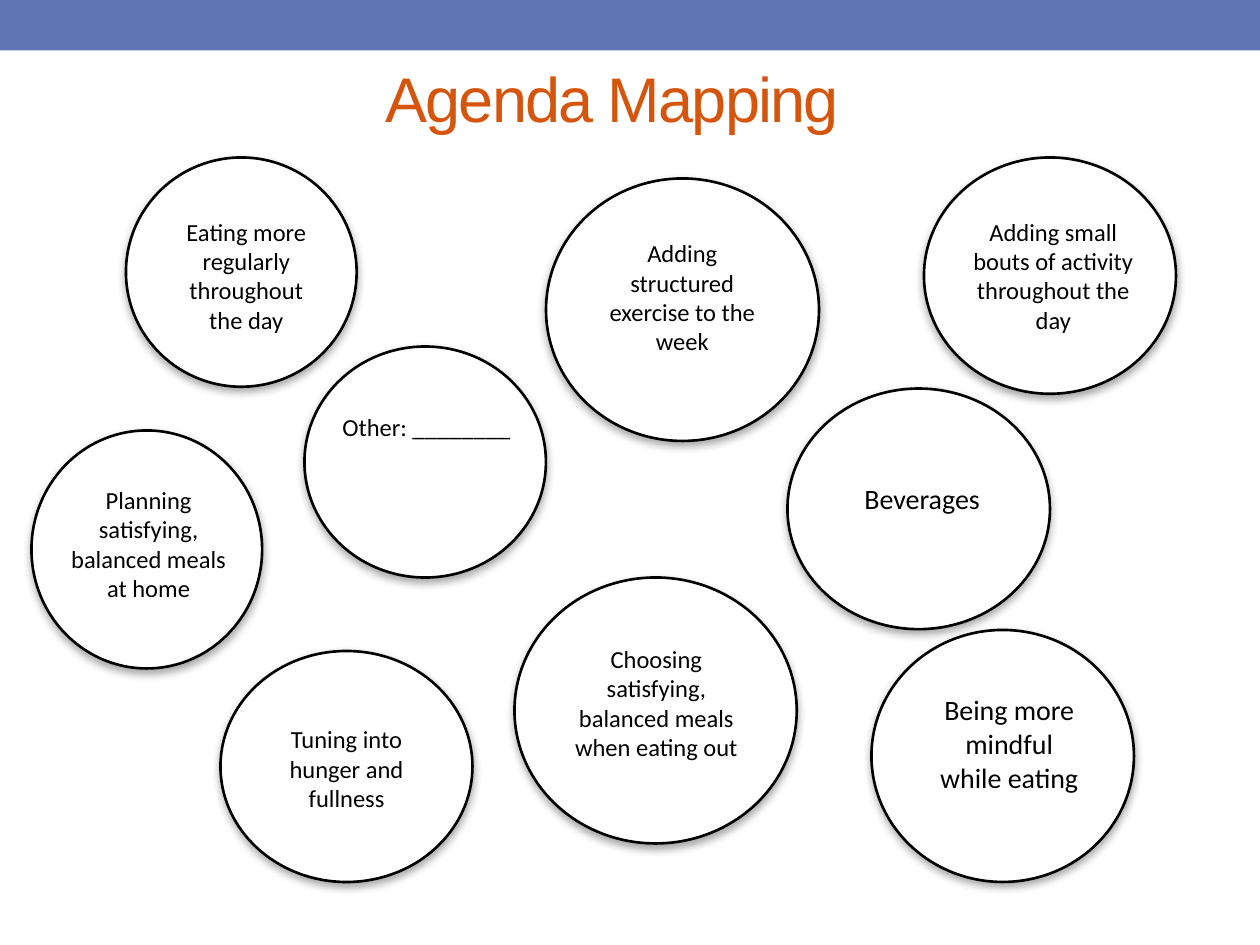
from dataclasses import dataclass

from lxml import etree
from pptx import Presentation
from pptx.dml.color import RGBColor
from pptx.enum import shapes, text
from pptx.oxml import ns
from pptx.util import Pt

BLUE = RGBColor(0x60, 0x76, 0xB4)
ORANGE = RGBColor(0xD6, 0x55, 0x0D)
BLACK = RGBColor(0, 0, 0)
WHITE = RGBColor(255, 255, 255)

INSET = 7.2
Box = tuple[float, float, float, float]  # left, top, width, height in points


@dataclass
class Topic:
    circle: Box
    label: Box
    lines: list[str]
    size: float = 14
    drop: float = 0  # extra space above the words
    grouped: bool = True


TOPICS = [
    Topic((72, 90, 131.8, 131), (96.5, 116.6, 88.6, 87.8),
          ["Eating more regularly throughout the day"]),
    Topic((18, 246, 131.8, 136), (25.9, 270, 118, 100),
          ["Planning satisfying, balanced meals", "at home"]),
    Topic((126, 372, 144, 132), (149.8, 406.8, 96.5, 60.5),
          ["Tuning into hunger and fullness"], grouped=False),
    Topic((174, 198, 138, 132), (183.6, 216, 120.2, 97.2),
          ["Other: ________"], drop=22),
    Topic((312, 102, 156, 150), (337.7, 128.9, 104.4, 100.8),
          ["Adding structured exercise to the week"]),
    Topic((528, 90, 144, 135), (545, 116.6, 113.8, 72.7),
          ["Adding small bouts of activity throughout the day"], grouped=False),
    Topic((498, 360, 150, 144), (526.3, 388.8, 100.8, 96.5),
          ["Being more mindful while eating"], size=16),
    Topic((450, 222, 150, 137.5), (476.6, 267.8, 100.8, 92.2),
          ["Beverages"], size=16),
    Topic((294, 330, 161.3, 152), (321.1, 360.7, 108, 112.3),
          ["Choosing satisfying, balanced meals when eating out"]),
]


def add_shadow(s) -> None:
    """Give the shape a soft black shadow straight below it."""
    s.shadow.inherit = False
    effects = s._element.spPr.find(ns.qn("a:effectLst"))
    shadow = etree.SubElement(effects, ns.qn("a:outerShdw"), blurRad=str(Pt(5)),
                              dist=str(Pt(2.1)), dir="5400000", rotWithShape="0")
    colour = etree.SubElement(shadow, ns.qn("a:srgbClr"), val=str(BLACK))
    etree.SubElement(colour, ns.qn("a:alpha"), val="35000")


def add_text(parent, box: Box, lines: list[str], font: str, size: float,
             colour: RGBColor, drop: float = 0):
    """Add a centred, wrapping text box with one paragraph per line."""
    s = parent.add_textbox(*map(Pt, box))
    tf = s.text_frame
    tf.word_wrap = True
    tf.margin_left = tf.margin_right = tf.margin_bottom = Pt(INSET)
    tf.margin_top = Pt(INSET + drop)
    for i, line in enumerate(lines):
        p = tf.add_paragraph() if i else tf.paragraphs[0]
        p.alignment = text.PP_ALIGN.CENTER
        r = p.add_run()
        r.text = line
        r.font.name, r.font.size = font, Pt(size)
        r.font.color.rgb = colour
    return s


def add_topic(parent, topic: Topic) -> None:
    if topic.grouped:
        parent = parent.add_group_shape().shapes
    s = parent.add_shape(shapes.MSO_SHAPE.OVAL, *map(Pt, topic.circle))
    s.fill.solid()
    s.fill.fore_color.rgb = WHITE
    s.line.color.rgb = BLACK
    s.line.width = Pt(1.5)
    add_shadow(s)
    add_text(parent, topic.label, topic.lines, "Calibri", topic.size, BLACK,
             topic.drop)


def add_band(parent) -> None:
    s = parent.add_shape(shapes.MSO_SHAPE.RECTANGLE, 0, 0, Pt(720), Pt(28.8))
    s.fill.solid()
    s.fill.fore_color.rgb = BLUE
    s.line.fill.background()
    s.shadow.inherit = False


def add_title(parent) -> None:
    s = add_text(parent, (25.9, 16.6, 648, 77.8), ["Agenda Mapping"],
                 "Arial", 36, ORANGE)
    tf = s.text_frame
    tf.vertical_anchor = text.MSO_ANCHOR.MIDDLE
    r = tf.paragraphs[0].runs[0]
    r.font._element.set("spc", "-100")  # letter spacing of -1 pt


def main() -> None:
    prs = Presentation()
    prs.slide_width, prs.slide_height = Pt(720), Pt(540)
    slide = prs.slides.add_slide(prs.slide_layouts[6])
    add_band(slide.shapes)
    for topic in TOPICS:
        add_topic(slide.shapes, topic)
    add_title(slide.shapes)
    prs.save("out.pptx")


if __name__ == "__main__":
    main()
